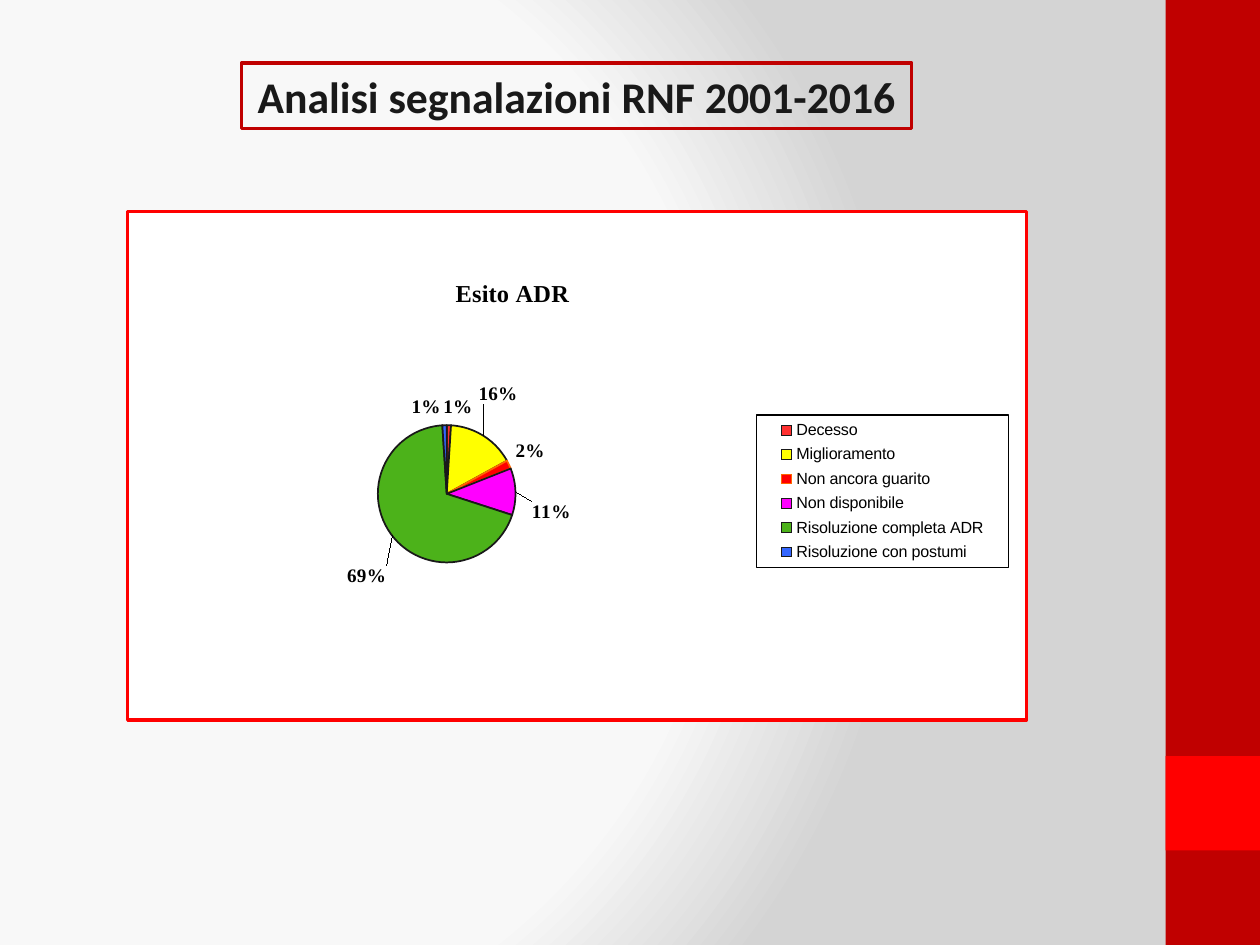
from copy import deepcopy

from pptx import Presentation
from pptx.chart.data import CategoryChartData
from pptx.dml.color import RGBColor
from pptx.enum.chart import XL_CHART_TYPE, XL_LABEL_POSITION, XL_LEGEND_POSITION
from pptx.enum.shapes import MSO_SHAPE
from pptx.enum.text import MSO_ANCHOR, MSO_AUTO_SIZE, PP_ALIGN
from pptx.oxml import parse_xml
from pptx.oxml.ns import nsdecls, qn
from pptx.util import Pt

PIE = XL_CHART_TYPE.PIE
RIGHT = XL_LEGEND_POSITION.RIGHT
OUTSIDE = XL_LABEL_POSITION.OUTSIDE_END
RECT = MSO_SHAPE.RECTANGLE
CENTER = PP_ALIGN.CENTER
MIDDLE = MSO_ANCHOR.MIDDLE
FIXED = MSO_AUTO_SIZE.NONE

COLORS = {
    "band": "C00000", "accent": "FF0000", "ink": "191919",
    "black": "000000", "white": "FFFFFF", "orange": "FF6600",
}
BACKDROP = [(0, "F9F9F9"), (75, "F8F8F8"), (100, "D4D4D4")]
OUTCOMES = [
    ("Decesso", 1, "FF3030"),
    ("Miglioramento", 16, "FFFF00"),
    ("Non ancora guarito", 2, "FF0000"),
    ("Non disponibile", 11, "FF00FF"),
    ("Risoluzione completa ADR", 69, "4CB21A"),
    ("Risoluzione con postumi", 1, "3366FF"),
]
LABEL_SHIFTS = {
    0: (0.01, 0), 1: (-0.01, -0.05), 3: (0.01, 0.04), 4: (0, 0.05), 5: (-0.02, 0),
}


def rgb(name):
    return RGBColor.from_string(COLORS[name])


def set_font(font, name, size, color, bold=False):
    font.name, font.size, font.bold = name, Pt(size), bold
    font.color.rgb = rgb(color)


def set_line(line, color, width):
    line.color.rgb = rgb(color)
    line.width = Pt(width)


def add_background(s):
    s.background.fill.gradient()
    old = s.element.xpath(".//p:bg//a:gradFill")[0]
    stops = "".join(
        f'<a:gs pos="{pos * 1000}"><a:srgbClr val="{color}"/></a:gs>'
        for pos, color in BACKDROP
    )
    old.getparent().replace(old, parse_xml(
        f'<a:gradFill {nsdecls("a")} rotWithShape="1"><a:gsLst>{stops}</a:gsLst>'
        '<a:path path="circle"><a:fillToRect l="20000" t="50000" r="100000" '
        'b="50000"/></a:path></a:gradFill>'
    ))


def add_block(s, x, y, w, h, color):
    sp = s.shapes.add_shape(RECT, Pt(x), Pt(y), Pt(w), Pt(h))
    sp.shadow.inherit = False
    sp.fill.solid()
    sp.fill.fore_color.rgb = rgb(color)
    sp.line.fill.background()


def add_title(s, text):
    sp = s.shapes.title
    sp.left, sp.top, sp.width, sp.height = Pt(138), Pt(36), Pt(383), Pt(37.5)
    set_line(sp.line, "band", 2)
    tf = sp.text_frame
    tf.word_wrap = False
    tf.auto_size = FIXED
    tf.vertical_anchor = MIDDLE
    p = tf.paragraphs[0]
    p.alignment = CENTER
    r = p.add_run()
    r.text = text
    set_font(r.font, "Calibri", 25, "ink", True)


def set_layout(el, index, tags):
    for old in el.findall(qn("c:layout")):
        el.remove(old)
    parts = "".join(f'<c:{tag} val="{val}"/>' for tag, val in tags.items())
    el.insert(index, parse_xml(
        f'<c:layout {nsdecls("c")}><c:manualLayout>{parts}</c:manualLayout></c:layout>'
    ))


def frame(color, width):
    return parse_xml(
        f'<c:spPr {nsdecls("c", "a")}><a:solidFill><a:srgbClr val="{COLORS["white"]}"/>'
        f'</a:solidFill><a:ln w="{Pt(width)}"><a:solidFill>'
        f'<a:srgbClr val="{COLORS[color]}"/></a:solidFill></a:ln></c:spPr>'
    )


def edges(x, y):
    return {"xMode": "edge", "yMode": "edge", "x": x, "y": y}


def format_title(chart):
    chart.has_title = True
    title = chart.chart_title
    r = title.text_frame.paragraphs[0].add_run()
    r.text = "Esito ADR"
    set_font(r.font, "Times New Roman", 14, "black", True)
    title.include_in_layout = False
    set_layout(title._element, 1, edges(0.36, 0.12))


def format_legend(chart):
    chart.has_legend = True
    legend = chart.legend
    legend.position = RIGHT
    legend.include_in_layout = False
    set_font(legend.font, "Arial", 9.2, "black")
    el = legend._element
    set_layout(el, 1, {**edges(0.7, 0.4), "w": 0.28, "h": 0.3})
    el.find(qn("c:txPr")).addprevious(frame("black", 0.75))


def format_slices(series):
    for i, (name, value, color) in enumerate(OUTCOMES):
        fmt = series.points[i].format
        fmt.fill.solid()
        fmt.fill.fore_color.rgb = RGBColor.from_string(color)
        set_line(fmt.line, "orange" if name == "Non ancora guarito" else "ink", 1)


def format_labels(series):
    labels = series.data_labels
    labels.show_value = False
    labels.show_percentage = True
    labels.number_format = "0%"
    labels.number_format_is_linked = False
    labels.position = OUTSIDE
    set_font(labels.font, "Times New Roman", 11, "black", True)
    el = labels._element
    shared = [c for c in el if c.tag != qn("c:showLeaderLines")]
    for n, (i, (dx, dy)) in enumerate(LABEL_SHIFTS.items()):
        label = parse_xml(f'<c:dLbl {nsdecls("c")}><c:idx val="{i}"/></c:dLbl>')
        set_layout(label, 1, {"x": dx, "y": dy})
        label.extend(deepcopy(shared))
        el.insert(n, label)


def add_pie(s):
    data = CategoryChartData()
    data.categories = [name for name, value, color in OUTCOMES]
    data.add_series("Series 1", [value for name, value, color in OUTCOMES])
    chart = s.shapes.add_chart(PIE, Pt(72), Pt(120), Pt(515.5), Pt(292.5), data).chart
    set_font(chart.font, "Arial", 10, "black")
    format_title(chart)
    format_legend(chart)
    plot = chart.plots[0]
    plot.vary_by_categories = True
    format_slices(plot.series[0])
    format_labels(plot.series[0])
    el = chart._chartSpace.find(qn("c:chart"))
    el.addnext(frame("accent", 2))
    set_layout(el.find(qn("c:plotArea")), 0, {
        "layoutTarget": "inner", **edges(0.13, 0.42), "w": 0.45, "h": 0.27,
    })


def main():
    """Build the slide on adverse reaction outcomes."""
    prs = Presentation()
    prs.slide_width, prs.slide_height = Pt(720), Pt(540)
    s = prs.slides.add_slide(prs.slide_layouts[5])
    add_background(s)
    add_block(s, 666, 0, 54, 540, "band")
    add_block(s, 666, 432, 54, 54, "accent")
    add_pie(s)
    add_title(s, "Analisi segnalazioni RNF 2001-2016")
    prs.save("out.pptx")


if __name__ == "__main__":
    main()
